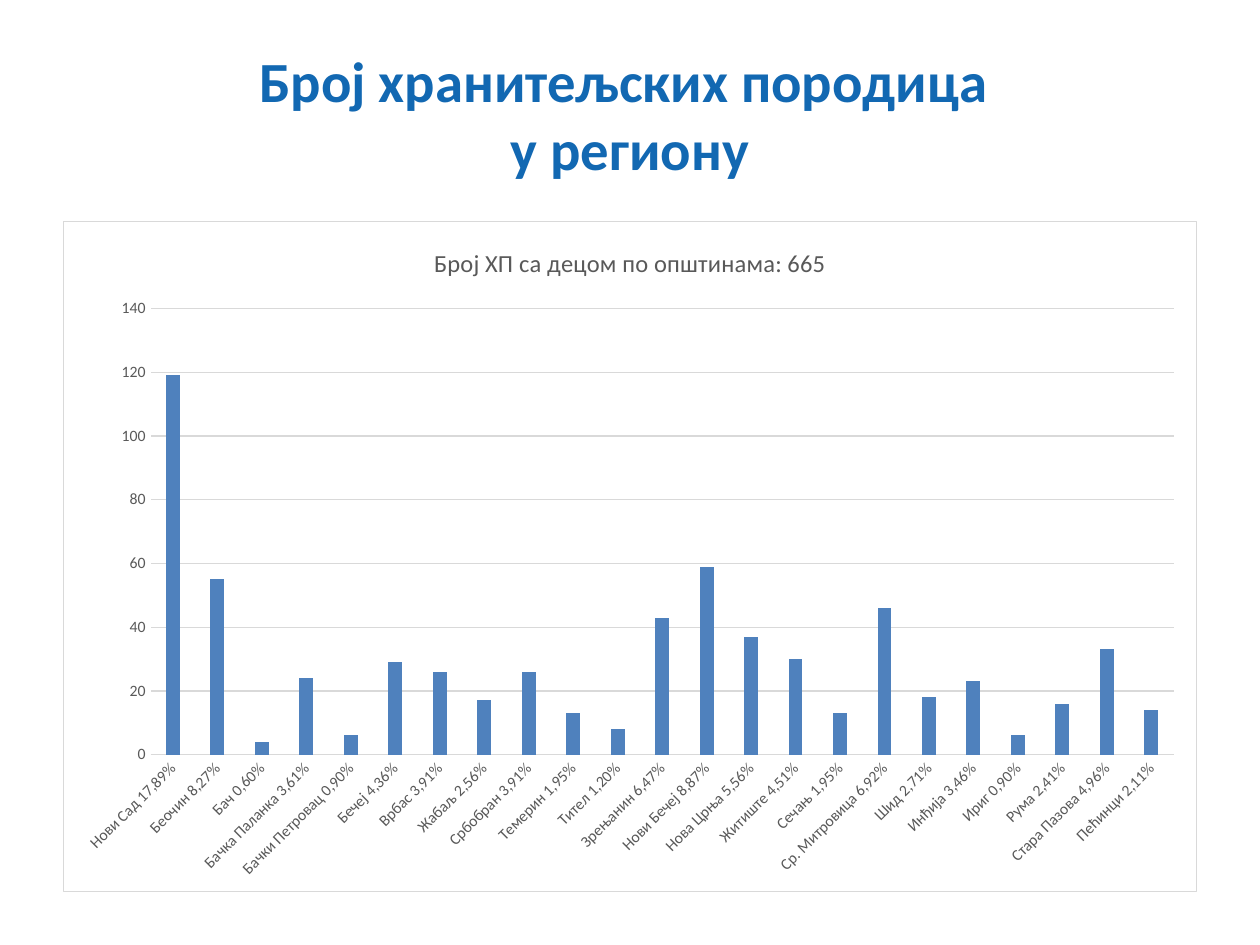
from lxml import etree
from pptx import Presentation
from pptx.chart.data import CategoryChartData
from pptx.dml.color import RGBColor
from pptx.enum import chart as chart_enum, text
from pptx.oxml import parse_xml
from pptx.oxml.ns import nsdecls, qn
from pptx.util import Inches, Pt

COLORS = {"title": "1268B2", "bar": "4F81BD", "label": "595959",
          "line": "D9D9D9", "text": "000000"}
FONT = "Calibri"
FAMILIES = {
    "Нови Сад 17,89%": 119, "Беочин 8,27%": 55, "Бач 0,60%": 4,
    "Бачка Паланка 3,61%": 24, "Бачки Петровац 0,90%": 6,
    "Бечеј 4,36%": 29, "Врбас 3,91%": 26, "Жабаљ 2,56%": 17,
    "Србобран 3,91%": 26, "Темерин 1,95%": 13, "Тител 1,20%": 8,
    "Зрењанин 6,47%": 43, "Нови Бечеј 8,87%": 59, "Нова Црња 5,56%": 37,
    "Житиште 4,51%": 30, "Сечањ 1,95%": 13, "Ср. Митровица 6,92%": 46,
    "Шид 2,71%": 18, "Инђија 3,46%": 23, "Ириг 0,90%": 6,
    "Рума 2,41%": 16, "Стара Пазова 4,96%": 33, "Пећинци 2,11%": 14,
}


def color(name):
    return RGBColor.from_string(COLORS[name])


def set_font(font, size, color_name, bold=False):
    font.name = FONT
    font.size = Pt(size)
    font.bold = bold
    font.color.rgb = color(color_name)


def set_line(line):
    line.color.rgb = color("line")
    line.width = Pt(0.75)


def place_title(slide, left, top, width, height):
    title = slide.shapes.title
    title.left, title.top, title.width, title.height = left, top, width, height
    frame = title.text_frame
    frame.word_wrap = True
    frame.auto_size = text.MSO_AUTO_SIZE.NONE
    frame.vertical_anchor = text.MSO_ANCHOR.MIDDLE
    frame.text = "Број хранитељских породица \vу региону"
    paragraph = frame.paragraphs[0]
    paragraph.alignment = text.PP_ALIGN.CENTER
    set_font(paragraph.font, 32.4, "title", bold=True)


def add_border(chart):
    border = parse_xml(
        f'<c:spPr {nsdecls("c", "a")}><a:noFill/><a:ln w="{Pt(0.75)}"><a:solidFill>'
        f'<a:srgbClr val="{COLORS["line"]}"/></a:solidFill></a:ln></c:spPr>')
    chart.element.find(qn("c:chart")).addnext(border)


def add_families_chart(slide, left, top, width, height):
    data = CategoryChartData()
    data.categories = list(FAMILIES)
    data.add_series("Series 1", list(FAMILIES.values()))
    chart = slide.shapes.add_chart(
        chart_enum.XL_CHART_TYPE.COLUMN_CLUSTERED, left, top, width, height, data).chart
    set_font(chart.font, 10, "text")
    add_border(chart)
    chart.has_legend = False

    # Chart title
    chart.has_title = True
    chart.chart_title.include_in_layout = False
    frame = chart.chart_title.text_frame
    frame.text = "Број ХП са децом по општинама: 665"
    set_font(frame.paragraphs[0].font, 14, "label")

    # Columns
    plot = chart.plots[0]
    plot.gap_width = 219
    plot.overlap = -27
    plot.vary_by_categories = False
    fill = plot.series[0].format.fill
    fill.solid()
    fill.fore_color.rgb = color("bar")

    # Axes
    for axis in (chart.category_axis, chart.value_axis):
        axis.major_tick_mark = chart_enum.XL_TICK_MARK.NONE
        axis.minor_tick_mark = chart_enum.XL_TICK_MARK.NONE
        set_font(axis.tick_labels.font, 9, "label")
    set_line(chart.category_axis.format.line)
    labels = chart.category_axis._element.find(qn("c:txPr"))
    labels.find(qn("a:bodyPr")).set("rot", str(-45 * 60000))
    value_axis = chart.value_axis
    value_axis.minimum_scale = 0
    value_axis.maximum_scale = 140
    value_axis.major_unit = 20
    value_axis.format.line.fill.background()
    value_axis.has_major_gridlines = True
    set_line(value_axis.major_gridlines.format.line)


def main():
    presentation = Presentation()
    presentation.slide_width = Inches(10)
    presentation.slide_height = Inches(7.5)
    slide = presentation.slides.add_slide(presentation.slide_layouts[5])
    place_title(slide, Inches(0.5), Inches(0.3), Inches(9), Inches(1.2))
    add_families_chart(slide, Inches(0.5), Inches(1.75), Inches(9), Inches(5.33))
    presentation.save("out.pptx")


if __name__ == "__main__":
    main()
